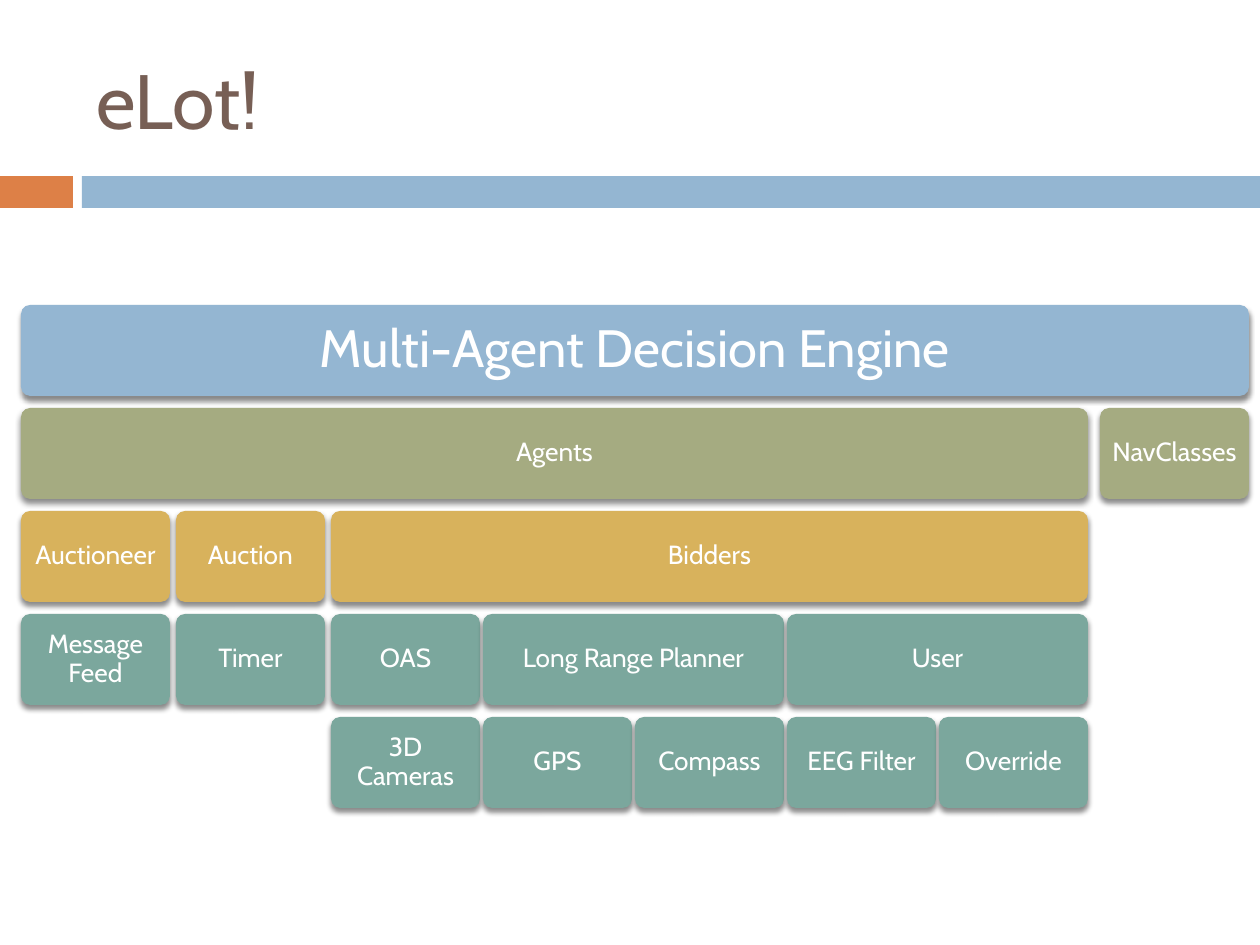
from dataclasses import dataclass

from lxml.etree import SubElement as Sub
from pptx import Presentation
from pptx.dml.color import RGBColor as Rgb
from pptx.enum.shapes import MSO_SHAPE as Kind
from pptx.enum.text import MSO_ANCHOR as Anchor, PP_ALIGN as Align
from pptx.oxml.ns import qn
from pptx.util import Emu, Pt

SCALE = 914400 / 126  # EMU in one px


@dataclass(frozen=True)
class Theme:
    font: str = "Cabin"
    title: str = "775F55"
    text: str = "FFFFFF"
    accent: str = "DD8047"
    band: str = "94B6D2"
    levels: tuple = ("94B6D2", "A5AB81", "D8B25C", "7BA79D", "7BA79D")
    sizes: tuple = (30, 15, 15, 15, 15)
    head: int = 44


THEME = Theme()

# Block grid: the gap between siblings depends on their depth
LEFT, TOP = 21, 305
LEAF, HIGH, PITCH = 149, 91, 103
GAPS = (0, 12, 6, 3, 3)
INSET = 6

# Each node is a label and its children
TREE = ("Multi-Agent Decision Engine", [
    ("Agents", [
        ("Auctioneer", [("Message Feed", [])]),
        ("Auction", [("Timer", [])]),
        ("Bidders", [
            ("OAS", [("3D Cameras", [])]),
            ("Long Range Planner", [("GPS", []), ("Compass", [])]),
            ("User", [("EEG Filter", []), ("Override", [])]),
        ]),
    ]),
    ("NavClasses", []),
])


def px(*nums):
    return [Emu(round(n * SCALE)) for n in nums]


def write(frame, text, size, color, align):
    frame.word_wrap = True
    frame.vertical_anchor = Anchor.MIDDLE
    para = frame.paragraphs[0]
    para.alignment = align
    run = para.add_run()
    run.text = text
    run.font.name = THEME.font
    run.font.size = Pt(size)
    run.font.color.rgb = Rgb.from_string(color)
    return para


def add_box(slide, kind, box, color):
    shape = slide.shapes.add_shape(kind, *px(*box))
    shape.shadow.inherit = False
    shape.fill.solid()
    shape.fill.fore_color.rgb = Rgb.from_string(color)
    shape.line.fill.background()
    return shape


def add_shadow(shape):
    effects = shape._element.spPr.find(qn("a:effectLst"))
    outer = Sub(effects, qn("a:outerShdw"), blurRad=str(Pt(3)),
                dist=str(Pt(2.4)), dir="5400000", rotWithShape="0")
    color = Sub(outer, qn("a:srgbClr"), val="000000")
    Sub(color, qn("a:alpha"), val="45000")


def add_title(slide, text):
    title = slide.shapes.title
    title.left, title.top, title.width, title.height = px(84, 31, 1124, 136)
    write(title.text_frame, text, THEME.head, THEME.title, Align.LEFT)


def add_block(slide, text, depth, left, width):
    box = (left, TOP + depth * PITCH, width, HIGH)
    shape = add_box(slide, Kind.ROUNDED_RECTANGLE, box, THEME.levels[depth])
    shape.adjustments[0] = 0.1
    add_shadow(shape)
    frame = shape.text_frame
    frame.margin_left, frame.margin_right = px(INSET, INSET)
    frame.margin_top, frame.margin_bottom = px(INSET, INSET)
    para = write(frame, text, THEME.sizes[depth], THEME.text, Align.CENTER)
    para.line_spacing = 0.9


def span(node, depth):
    """Width of a node: that of its children with their gaps."""
    kids = node[1]
    if not kids:
        return LEAF
    gaps = GAPS[depth + 1] * (len(kids) - 1)
    return sum(span(kid, depth + 1) for kid in kids) + gaps


def add_tree(slide, node, depth=0, left=LEFT):
    text, kids = node
    add_block(slide, text, depth, left, span(node, depth))
    for kid in kids:
        add_tree(slide, kid, depth + 1, left)
        left += span(kid, depth + 1) + GAPS[depth + 1]


def main():
    deck = Presentation()
    deck.slide_width, deck.slide_height = px(1260, 945)
    slide = deck.slides.add_slide(deck.slide_layouts[5])

    # Header: title above a two-part band
    add_title(slide, "eLot!")
    add_box(slide, Kind.RECTANGLE, (0, 176, 73, 32), THEME.accent)
    add_box(slide, Kind.RECTANGLE, (82, 176, 1178, 32), THEME.band)

    # Stacked blocks
    add_tree(slide, TREE)
    deck.save("out.pptx")


if __name__ == "__main__":
    main()
